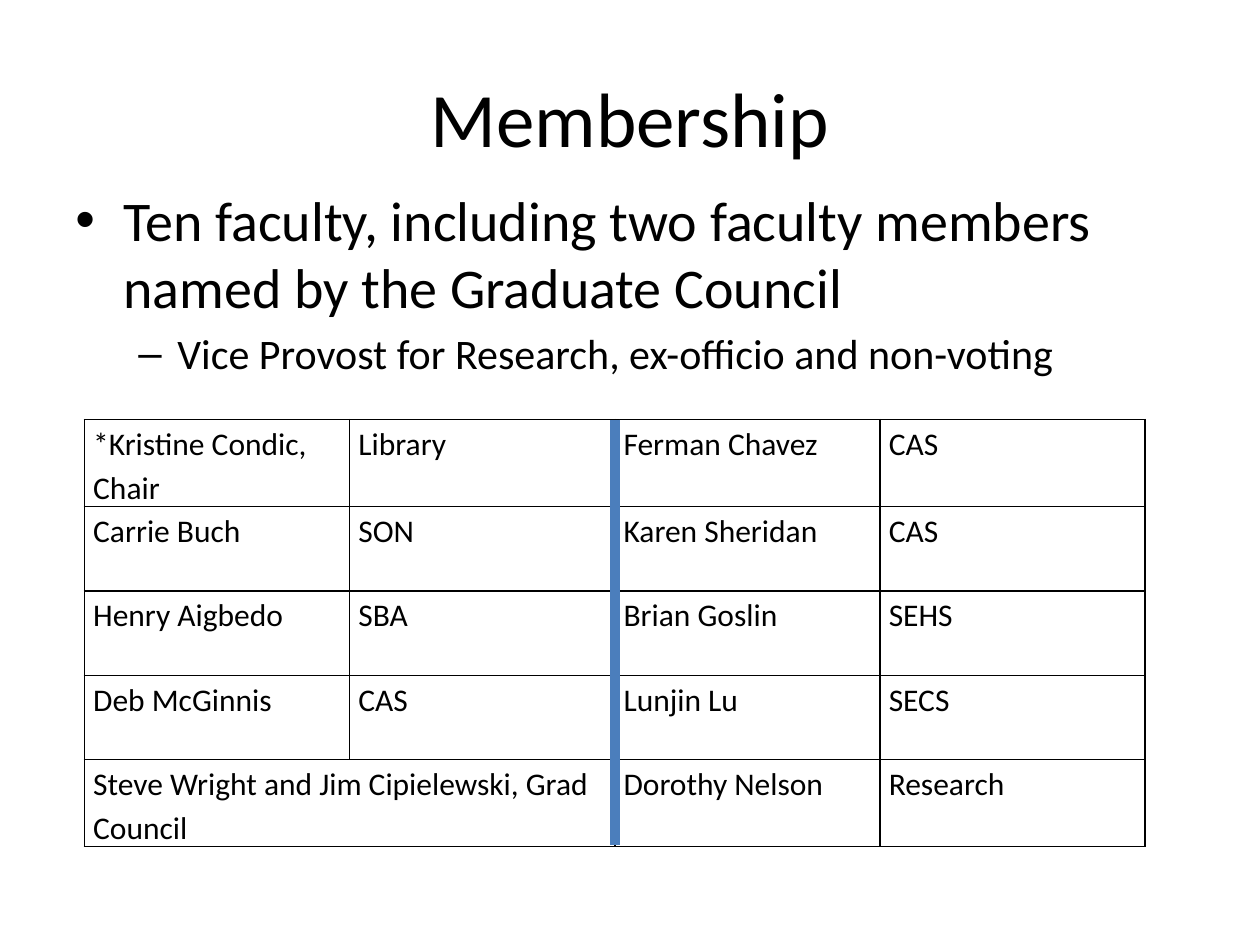
from lxml.etree import SubElement
from pptx import Presentation
from pptx.dml.color import RGBColor
from pptx.enum.shapes import MSO_CONNECTOR
from pptx.enum.text import MSO_ANCHOR, PP_ALIGN
from pptx.oxml.ns import qn
from pptx.util import Inches, Pt

TITLE = "Membership"
POINTS = [
    ("•", "Ten faculty, including two faculty members named by the Graduate Council", 32, 0.38, 0.38),
    ("–", "Vice Provost for Research, ex-officio and non-voting", 24, 0.81, 0.31),
]
ROWS = [
    ("*Kristine Condic, Chair", "Library", "Ferman Chavez", "CAS"),
    ("Carrie Buch", "SON", "Karen Sheridan", "CAS"),
    ("Henry Aigbedo", "SBA", "Brian Goslin", "SEHS"),
    ("Deb McGinnis", "CAS", "Lunjin Lu", "SECS"),
    ("Steve Wright and Jim Cipielewski, Grad Council", None, "Dorothy Nelson", "Research"),
]
COLORS = {"ink": "000000", "bar": "4B7EBC"}
FONT = "Calibri"
LEFT, TOP, COL, ROW = 0.67, 3.33, 2.105, 0.67


def add_run(para, text, size):
    run = para.add_run()
    run.text = text
    run.font.name = FONT
    run.font.size = Pt(size)
    run.font.color.rgb = RGBColor.from_string(COLORS["ink"])


def add_title(slide):
    title = slide.shapes.title
    title.left, title.top = Inches(0.5), Inches(0.3)
    title.width, title.height = Inches(9), Inches(1.25)
    title.text_frame.vertical_anchor = MSO_ANCHOR.MIDDLE
    para = title.text_frame.paragraphs[0]
    para.alignment = PP_ALIGN.CENTER
    add_run(para, TITLE, 44)


def add_points(slide):
    box = slide.shapes.add_textbox(Inches(0.5), Inches(1.42), Inches(9), Inches(1.8))
    frame = box.text_frame
    frame.word_wrap = True
    for i, (mark, text, size, left, hang) in enumerate(POINTS):
        para = frame.add_paragraph() if i else frame.paragraphs[0]
        para.level = i
        para.space_before = Pt(size * 0.2)
        add_run(para, text, size)
        props = para._p.get_or_add_pPr()
        props.set("marL", str(Inches(left)))
        props.set("indent", str(-Inches(hang)))
        SubElement(props, qn("a:buFont"), typeface="Arial")
        SubElement(props, qn("a:buChar"), char=mark)


def add_edges(cell):
    props = cell._tc.get_or_add_tcPr()
    for side in ("lnL", "lnR", "lnT", "lnB"):
        line = SubElement(props, qn(f"a:{side}"), w=str(Pt(1)))
        fill = SubElement(line, qn("a:solidFill"))
        SubElement(fill, qn("a:srgbClr"), val=COLORS["ink"])


def add_grid(slide):
    count = len(ROWS[0])
    table = slide.shapes.add_table(
        len(ROWS), count, Inches(LEFT), Inches(TOP), Inches(COL * count), Inches(ROW * len(ROWS))
    ).table
    table.first_row = table.horz_banding = False
    for col in table.columns:
        col.width = Inches(COL)
    for r, names in enumerate(ROWS):
        table.rows[r].height = Inches(ROW)
        for c, name in enumerate(names):
            cell = table.cell(r, c)
            add_edges(cell)
            cell.fill.background()
            cell.margin_left = cell.margin_right = Inches(0.07)
            cell.margin_top = cell.margin_bottom = 0
            if name is None:
                table.cell(r, c - 1).merge(cell)
                continue
            para = cell.text_frame.paragraphs[0]
            para.line_spacing = 1.15
            add_run(para, name, 18)


def add_bar(slide):
    mid = Inches(LEFT + COL * 2)
    bar = slide.shapes.add_connector(MSO_CONNECTOR.STRAIGHT, mid, Inches(TOP), mid, Inches(6.71))
    bar.line.color.rgb = RGBColor.from_string(COLORS["bar"])
    bar.line.width = Pt(5.5)
    SubElement(bar._element.spPr, qn("a:effectLst"))


def main():
    deck = Presentation()
    deck.slide_width, deck.slide_height = Inches(10), Inches(7.5)
    slide = deck.slides.add_slide(deck.slide_layouts[5])
    add_title(slide)
    add_points(slide)
    add_grid(slide)
    add_bar(slide)
    deck.save("out.pptx")


if __name__ == "__main__":
    main()
